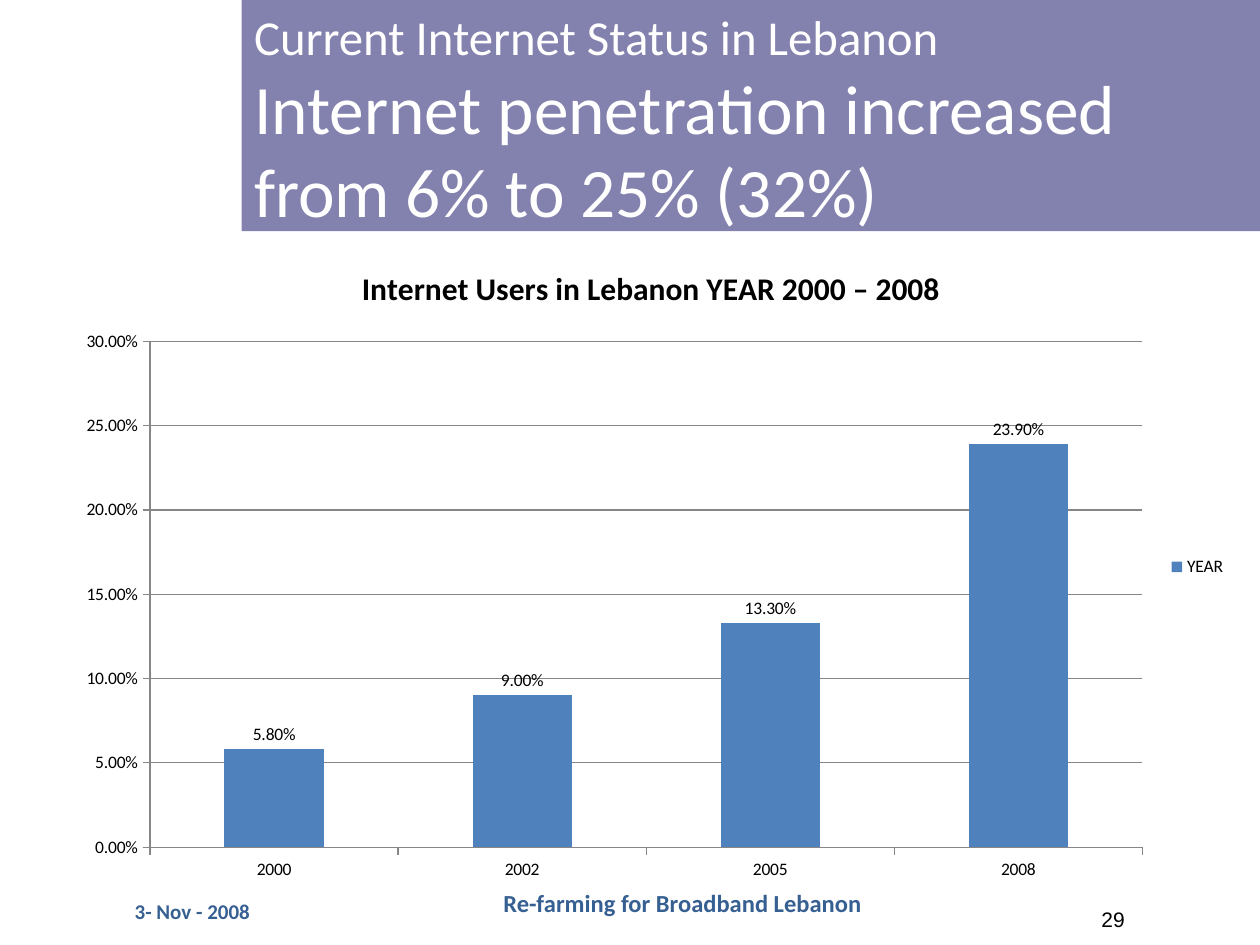
"""Build the slide on internet penetration in Lebanon."""
from pptx import Presentation
from pptx.chart.data import CategoryChartData
from pptx.dml.color import RGBColor
from pptx.enum.chart import XL_CHART_TYPE as ChartType, XL_LABEL_POSITION as LabelPos
from pptx.enum.chart import XL_LEGEND_POSITION as LegendPos, XL_TICK_MARK as Tick
from pptx.enum.text import MSO_ANCHOR as Anchor, MSO_AUTO_SIZE as AutoSize, PP_ALIGN as Align
from pptx.util import Cm, Pt


def rgb(value):
    return RGBColor.from_string(value)


class SlideBuilder:
    """Hold the style and the current slide."""
    face = "Calibri"
    ink, white = "000000", "FFFFFF"
    band, accent, bar, grid = "8381AD", "376092", "4F81BD", "868686"

    def __init__(self, deck):
        self.slide = deck.slides.add_slide(deck.slide_layouts[5])

    def style(self, font, size, color, bold=False, face=None):
        font.name, font.size, font.bold = face or self.face, Pt(size), bold
        font.color.rgb = rgb(color)

    def place(self, item, box):
        item.left, item.top, item.width, item.height = map(Cm, box)

    def title(self, box, lines):
        heading = self.slide.shapes.title
        self.place(heading, box)
        heading.fill.solid()
        heading.fill.fore_color.rgb = rgb(self.band)
        frame = heading.text_frame
        frame.word_wrap, frame.auto_size = True, AutoSize.NONE
        frame.vertical_anchor = Anchor.TOP
        paragraph = frame.paragraphs[0]
        paragraph.alignment = Align.LEFT
        for index, (words, size) in enumerate(lines):
            if index:
                paragraph.add_line_break()
            run = paragraph.add_run()
            run.text = words
            self.style(run.font, size, self.white)

    def label(self, box, words, size, align, color, bold=True, face=None, anchor=Anchor.TOP):
        frame = self.slide.shapes.add_textbox(*map(Cm, box)).text_frame
        frame.word_wrap, frame.vertical_anchor = True, anchor
        paragraph = frame.paragraphs[0]
        paragraph.alignment = align
        run = paragraph.add_run()
        run.text = words
        self.style(run.font, size, color, bold, face)

    def column_chart(self, box, heading, series_name, shares):
        data = CategoryChartData(number_format="0.00%")
        data.categories = list(shares)
        data.add_series(series_name, list(shares.values()))
        chart = self.slide.shapes.add_chart(
            ChartType.COLUMN_CLUSTERED, *map(Cm, box), data).chart
        self.style(chart.font, 10, self.ink)

        chart.has_title = True
        run = chart.chart_title.text_frame.paragraphs[0].add_run()
        run.text = heading
        self.style(run.font, 18, self.ink, bold=True)
        chart.chart_title.include_in_layout = False

        chart.has_legend = True
        chart.legend.position = LegendPos.RIGHT
        chart.legend.include_in_layout = False

        values = chart.value_axis
        values.minimum_scale, values.maximum_scale, values.major_unit = 0, 0.3, 0.05
        values.tick_labels.number_format = "0.00%"
        values.tick_labels.number_format_is_linked = False
        values.has_major_gridlines = True
        for part in (values, chart.category_axis, values.major_gridlines):
            part.format.line.color.rgb = rgb(self.grid)
            part.format.line.width = Pt(0.75)
        for axis in (values, chart.category_axis):
            axis.major_tick_mark = Tick.OUTSIDE

        plot = chart.plots[0]
        plot.gap_width, plot.vary_by_categories = 150, False
        fill = plot.series[0].format.fill
        fill.solid()
        fill.fore_color.rgb = rgb(self.bar)
        plot.has_data_labels = True
        labels = plot.data_labels
        labels.show_value, labels.position = True, LabelPos.OUTSIDE_END
        labels.number_format, labels.number_format_is_linked = "0.00%", False
        self.style(labels.font, 10, self.ink)


def main():
    deck = Presentation()
    deck.slide_width, deck.slide_height = Cm(25.4), Cm(19.05)
    page = SlideBuilder(deck)
    page.label((19.48, 18.2, 5.92, 0.64), "29", 12, Align.CENTER, page.ink,
               bold=False, face="Arial", anchor=Anchor.MIDDLE)
    page.title((4.87, 0, 20.53, 4.66), [
        ("Current Internet Status in Lebanon", 27.9),
        ("Internet penetration increased from 6% to 25% (32%)", 39.6)])
    page.label((1.27, 17.99, 4.02, 0.66), "3- Nov - 2008", 12, Align.RIGHT, page.accent)
    page.column_chart((1.27, 4.87, 23.71, 13.12), "Internet Users in Lebanon YEAR 2000 – 2008",
                      "YEAR", {"2000": 0.058, "2002": 0.09, "2005": 0.133, "2008": 0.239})
    page.label((7.62, 17.78, 12.28, 0.85), "Re-farming for Broadband Lebanon", 14,
               Align.CENTER, page.accent)
    deck.save("out.pptx")


if __name__ == "__main__":
    main()
